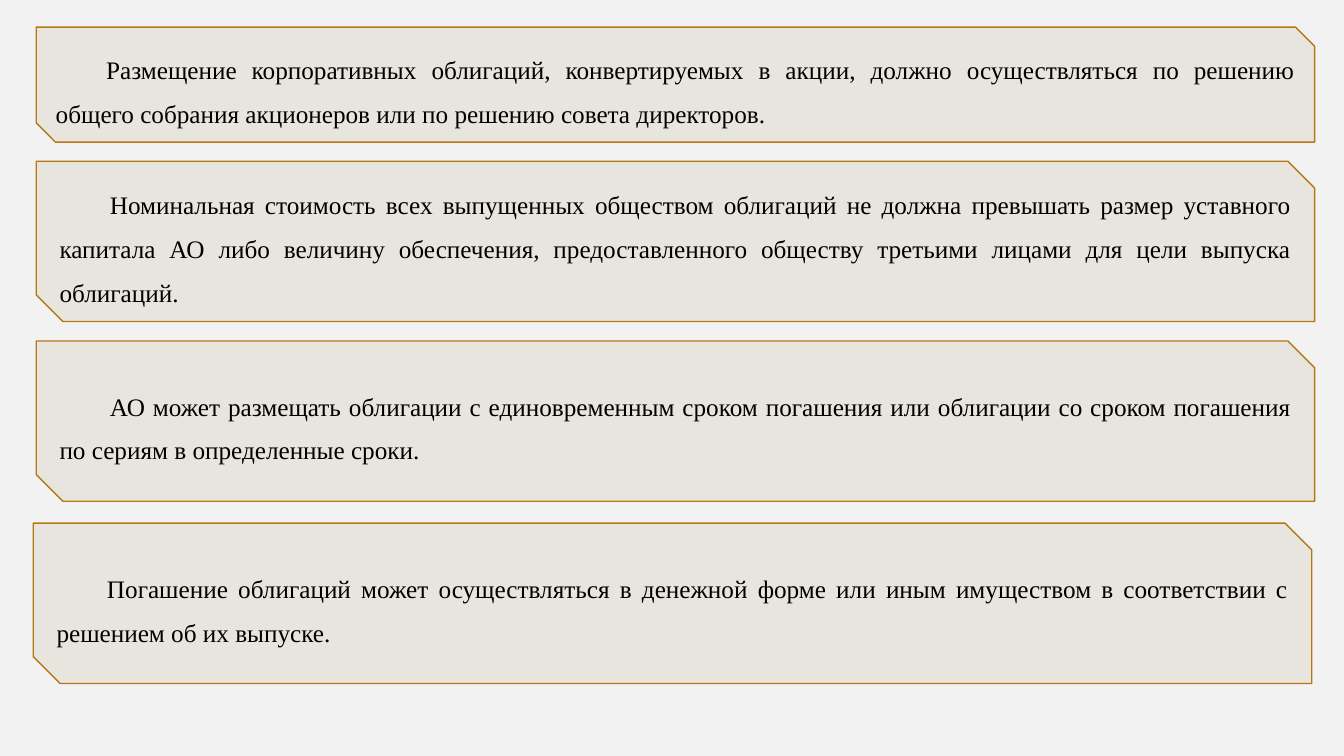
from pptx import Presentation
from pptx import util as u
from pptx.dml.color import RGBColor
from pptx.enum import shapes, text


def rgb(value):
    return RGBColor.from_string(value)


class Deck:
    """Holds the style and current slide; lengths are percentages of the slide's size."""

    font, size, spacing, indent = "Times New Roman", 18, 1.45, 0.5
    ink, fill, edge, back = "000000", "E8E5DE", "B67815", "F2F2F2"

    def __init__(self):
        self.prs = Presentation()
        self.prs.slide_width, self.prs.slide_height = u.Inches(13.33), u.Inches(7.5)
        self.s = self.prs.slides.add_slide(self.prs.slide_layouts[6])
        self.s.background.fill.solid()
        self.s.background.fill.fore_color.rgb = rgb(self.back)

    def x(self, share):
        return round(self.prs.slide_width * share / 100)

    def y(self, share):
        return round(self.prs.slide_height * share / 100)

    def card(self, left, top, width, height, words):
        sp = self.s.shapes.add_shape(
            shapes.MSO_SHAPE.SNIP_2_DIAG_RECTANGLE,
            self.x(left), self.y(top), self.x(width), self.y(height))
        sp.shadow.inherit = False
        sp.fill.solid()
        sp.fill.fore_color.rgb = rgb(self.fill)
        sp.line.color.rgb = rgb(self.edge)
        sp.line.width = u.Pt(1)
        tf = sp.text_frame
        tf.word_wrap = True
        tf.vertical_anchor = text.MSO_ANCHOR.MIDDLE
        p = tf.paragraphs[0]
        p.text = words
        p.alignment = text.PP_ALIGN.JUSTIFY
        p.line_spacing = self.spacing
        p._p.get_or_add_pPr().set("indent", str(u.Inches(self.indent)))
        p.font.name, p.font.size = self.font, u.Pt(self.size)
        p.font.color.rgb = rgb(self.ink)


WIDTH = 95.12
SHORT, TALL = 15.2, 21.2
RULES = [
    (2.7, 3.6, SHORT,
     "Размещение корпоративных облигаций, конвертируемых в акции, должно осуществляться "
     "по решению общего собрания акционеров или по решению совета директоров."),
    (2.7, 21.33, TALL,
     "Номинальная стоимость всех выпущенных обществом облигаций не должна превышать размер "
     "уставного капитала АО либо величину обеспечения, предоставленного обществу третьими "
     "лицами для цели выпуска облигаций."),
    (2.7, 45.1, TALL,
     "АО может размещать облигации с единовременным сроком погашения или облигации "
     "со сроком погашения по сериям в определенные сроки."),
    (2.48, 69.2, TALL,
     "Погашение облигаций может осуществляться в денежной форме или иным имуществом "
     "в соответствии с решением об их выпуске."),
]


def main():
    deck = Deck()
    for left, top, height, words in RULES:
        deck.card(left, top, WIDTH, height, words)
    deck.prs.save("out.pptx")


if __name__ == "__main__":
    main()
